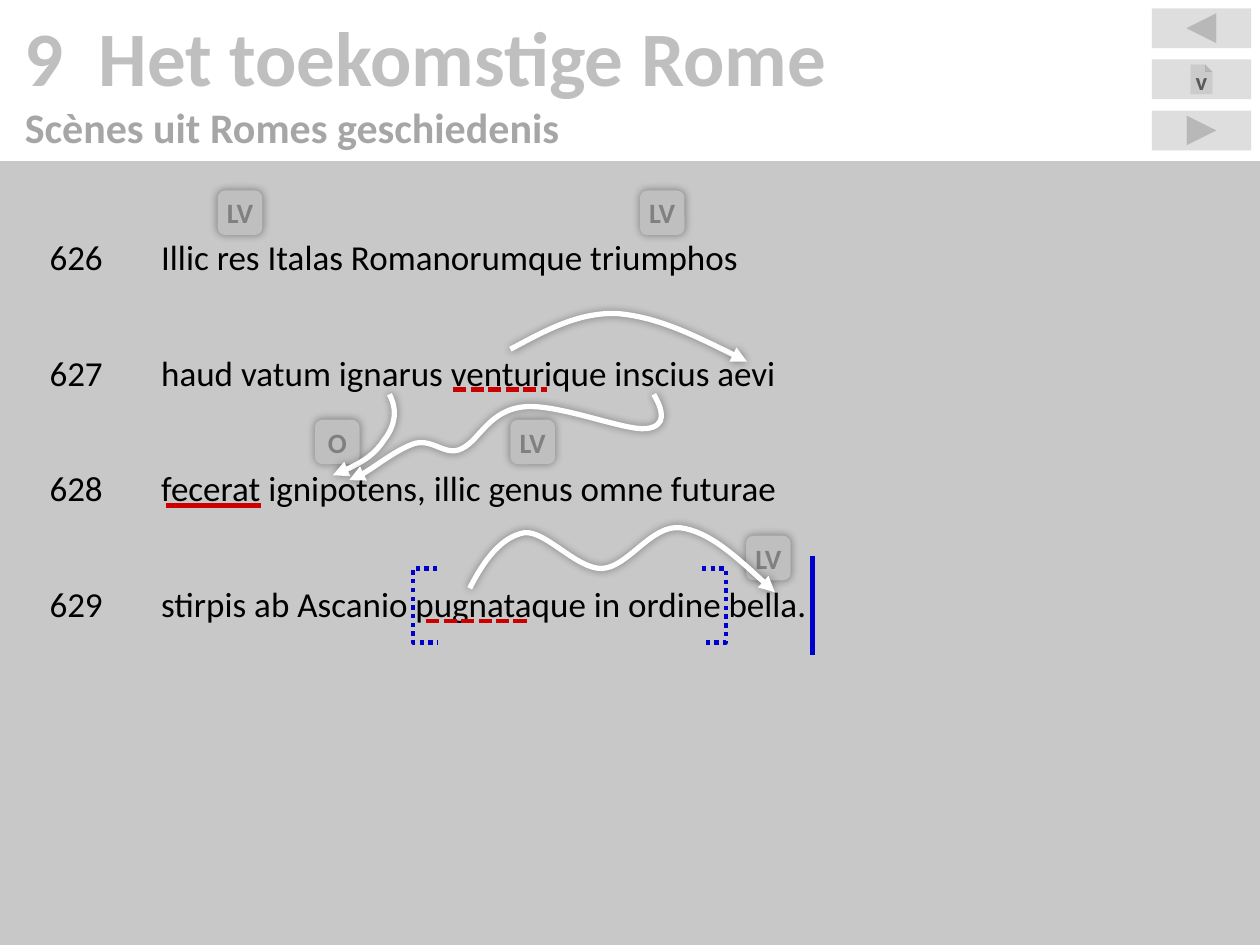
from dataclasses import dataclass

from lxml.etree import SubElement
from pptx import Presentation
from pptx.dml.color import RGBColor
from pptx.enum.dml import MSO_LINE as Dash
from pptx.enum.shapes import MSO_CONNECTOR as Link, MSO_SHAPE as Preset
from pptx.enum.text import MSO_ANCHOR as Anchor, PP_ALIGN as Align
from pptx.oxml.ns import qn
from pptx.util import Cm, Pt

Point = tuple[float, float]
GREY, WHITE, BLUE, RED = "BFBFBF", "FFFFFF", "0000CC", "CC0000"


@dataclass
class Badge:
    label: str
    left: float
    top: float


@dataclass
class Stroke:
    start: Point
    end: Point
    color: str
    dash: Dash | None = None


@dataclass
class Bracket:
    spine: float
    tip: float


BADGES = [
    Badge("O", 6.35, 8.46),
    Badge("LV", 4.39, 3.84),
    Badge("LV", 12.9, 3.84),
    Badge("LV", 10.29, 8.46),
    Badge("LV", 15.04, 10.8),
]
STROKES = [
    Stroke((16.38, 11.2), (16.38, 13.2), BLUE),
    Stroke((9.14, 7.85), (11.02, 7.85), RED, Dash.SQUARE_DOT),
    Stroke((3.35, 10.19), (5.26, 10.19), RED),
    Stroke((8.59, 12.52), (10.67, 12.52), RED, Dash.SQUARE_DOT),
]
BRACKETS = [Bracket(8.33, 8.82), Bracket(14.63, 14.15)]
ARROWS: list[list[Point]] = [
    [(7.85, 7.95), (8.03, 8.28), (7.95, 8.61), (7.75, 8.86),
     (7.57, 9.14), (7.26, 9.37), (6.71, 9.58)],
    [(13.18, 7.95), (13.36, 8.26), (13.46, 8.59), (13.03, 8.64),
     (12.6, 8.69), (11.3, 8.15), (10.59, 8.2),
     (9.86, 8.26), (9.68, 8.86), (9.32, 9.04),
     (8.99, 9.22), (8.74, 8.84), (8.36, 8.94),
     (7.98, 9.07), (7.29, 9.63), (7.04, 9.68)],
    [(10.29, 7.04), (10.97, 6.68), (11.63, 6.3), (12.42, 6.32),
     (13.23, 6.38), (14.15, 6.83), (15.06, 7.29)],
    [(9.47, 11.86), (9.75, 11.3), (10.11, 10.82), (10.57, 10.74),
     (11, 10.69), (11.63, 11.48), (12.14, 11.46),
     (12.67, 11.43), (13.13, 10.57), (13.72, 10.64),
     (14.3, 10.72), (14.96, 11.33), (15.62, 11.94)],
]
VERSES = {
    626: "Illic res Italas Romanorumque triumphos",
    627: "haud vatum ignarus venturique inscius aevi",
    628: "fecerat ignipotens, illic genus omne futurae",
    629: "stirpis ab Ascanio pugnataque in ordine bella.",
}


def paint(target, color: str, opacity: int = 100) -> None:
    target.solid()
    target.fore_color.rgb = RGBColor.from_string(color)
    if opacity < 100:
        tint = target._xPr.find(".//" + qn("a:srgbClr"))
        SubElement(tint, qn("a:alpha"), val=str(opacity * 1000))


def add_block(page, preset, left: float, top: float, width: float,
              height: float, opacity: int = 100):
    block = page.shapes.add_shape(preset, Cm(left), Cm(top), Cm(width), Cm(height))
    block.shadow.inherit = False
    block.line.fill.background()
    paint(block.fill, GREY, opacity)
    return block


def set_frame(frame, anchor: Anchor, across: float, down: float) -> None:
    frame.word_wrap = True
    frame.vertical_anchor = anchor
    frame.margin_left = frame.margin_right = Cm(across)
    frame.margin_top = frame.margin_bottom = Cm(down)


def add_span(para, text: str, size: int, color: str, bold: bool = True,
             align: Align = Align.LEFT) -> None:
    para.alignment = align
    span = para.add_run()
    span.text = text
    span.font.name = "Calibri"
    span.font.size = Pt(size)
    span.font.bold = bold
    paint(span.font.fill, color)


def add_glow(shape) -> None:
    shape.shadow.inherit = False
    effects = shape._element.spPr.find(qn("a:effectLst"))
    glow = SubElement(effects, qn("a:outerShdw"), blurRad=str(Pt(5)), dist="0",
                      dir="0", algn="ctr", rotWithShape="0")
    tint = SubElement(glow, qn("a:srgbClr"), val="000000")
    SubElement(tint, qn("a:alpha"), val="40000")


def style_line(line, color: str, width: float, dash: Dash | None = None) -> None:
    paint(line.fill, color)
    line.width = Pt(width)
    if dash is not None:
        line.dash_style = dash


def add_outline(page, points: list[Point]):
    start, *rest = [(Cm(x), Cm(y)) for x, y in points]
    builder = page.shapes.build_freeform(*start)
    builder.add_line_segments(rest, close=False)
    outline = builder.convert_to_shape()
    outline.fill.background()
    outline.shadow.inherit = False
    return outline


def add_arrow(page, points: list[Point]) -> None:
    arrow = add_outline(page, points)
    segments = list(arrow._element.iter(qn("a:lnTo")))
    for first in range(0, len(segments), 3):
        curve = SubElement(segments[first].getparent(), qn("a:cubicBezTo"))
        for segment in segments[first:first + 3]:
            curve.append(segment[0])
            segment.getparent().remove(segment)
    style_line(arrow.line, WHITE, 3)
    SubElement(arrow.line._get_or_add_ln(), qn("a:tailEnd"), type="triangle")
    add_glow(arrow)


def add_bracket(page, bracket: Bracket) -> None:
    top, bottom = 11.46, 12.95
    outline = add_outline(page, [(bracket.tip, top), (bracket.spine, top),
                                 (bracket.spine, bottom), (bracket.tip, bottom)])
    style_line(outline.line, BLUE, 2.5, Dash.ROUND_DOT)


def add_stroke(page, stroke: Stroke) -> None:
    ends = [Cm(value) for value in (*stroke.start, *stroke.end)]
    connector = page.shapes.add_connector(Link.STRAIGHT, *ends)
    style_line(connector.line, stroke.color, 2.5, stroke.dash)
    SubElement(connector._element.spPr, qn("a:effectLst"))


def add_badge(page, badge: Badge) -> None:
    block = add_block(page, Preset.ROUNDED_RECTANGLE, badge.left, badge.top, 0.9, 0.9)
    add_glow(block)
    set_frame(block.text_frame, Anchor.MIDDLE, 0, 0)
    add_span(block.text_frame.paragraphs[0], badge.label, 16, "808080",
             align=Align.CENTER)


def add_heading(page) -> None:
    box = page.shapes.add_textbox(0, 0, Cm(25.4), Cm(3.25))
    frame = box.text_frame
    set_frame(frame, Anchor.MIDDLE, 0.5, 0.5)
    add_span(frame.paragraphs[0], "9  Het toekomstige Rome", 44, GREY)
    add_span(frame.add_paragraph(), "Scènes uit Romes geschiedenis", 24, "A6A6A6")


def add_verses(page) -> None:
    frame = add_block(page, Preset.RECTANGLE, 0, 3.25, 25.4, 15.8, 85).text_frame
    set_frame(frame, Anchor.TOP, 1, 1.5)
    for index, (number, verse) in enumerate(VERSES.items()):
        para = frame.add_paragraph() if index else frame.paragraphs[0]
        para.space_after = Pt(42)
        stops = SubElement(para._p.get_or_add_pPr(), qn("a:tabLst"))
        SubElement(stops, qn("a:tab"), pos=str(Cm(2.25)), algn="l")
        add_span(para, f"{number}\t{verse}", 20, "000000", bold=False)


def add_buttons(page) -> None:
    presets = [Preset.ACTION_BUTTON_BACK_OR_PREVIOUS, Preset.ACTION_BUTTON_DOCUMENT,
               Preset.ACTION_BUTTON_FORWARD_OR_NEXT]
    back, document, forward = [
        add_block(page, preset, 23.22, 0.17 + 1.03 * row, 2, 0.8, 50)
        for row, preset in enumerate(presets)]
    set_frame(document.text_frame, Anchor.TOP, 0.25, 0.13)
    add_span(document.text_frame.paragraphs[0], "v", 14, "595959", align=Align.CENTER)


def main() -> None:
    deck = Presentation()
    deck.slide_width, deck.slide_height = Cm(25.4), Cm(19.05)
    page = deck.slides.add_slide(deck.slide_layouts[6])
    add_heading(page)
    add_verses(page)
    add_buttons(page)
    for draw, items in ((add_stroke, STROKES), (add_badge, BADGES),
                        (add_bracket, BRACKETS), (add_arrow, ARROWS)):
        for item in items:
            draw(page, item)
    deck.save("out.pptx")


if __name__ == "__main__":
    main()
